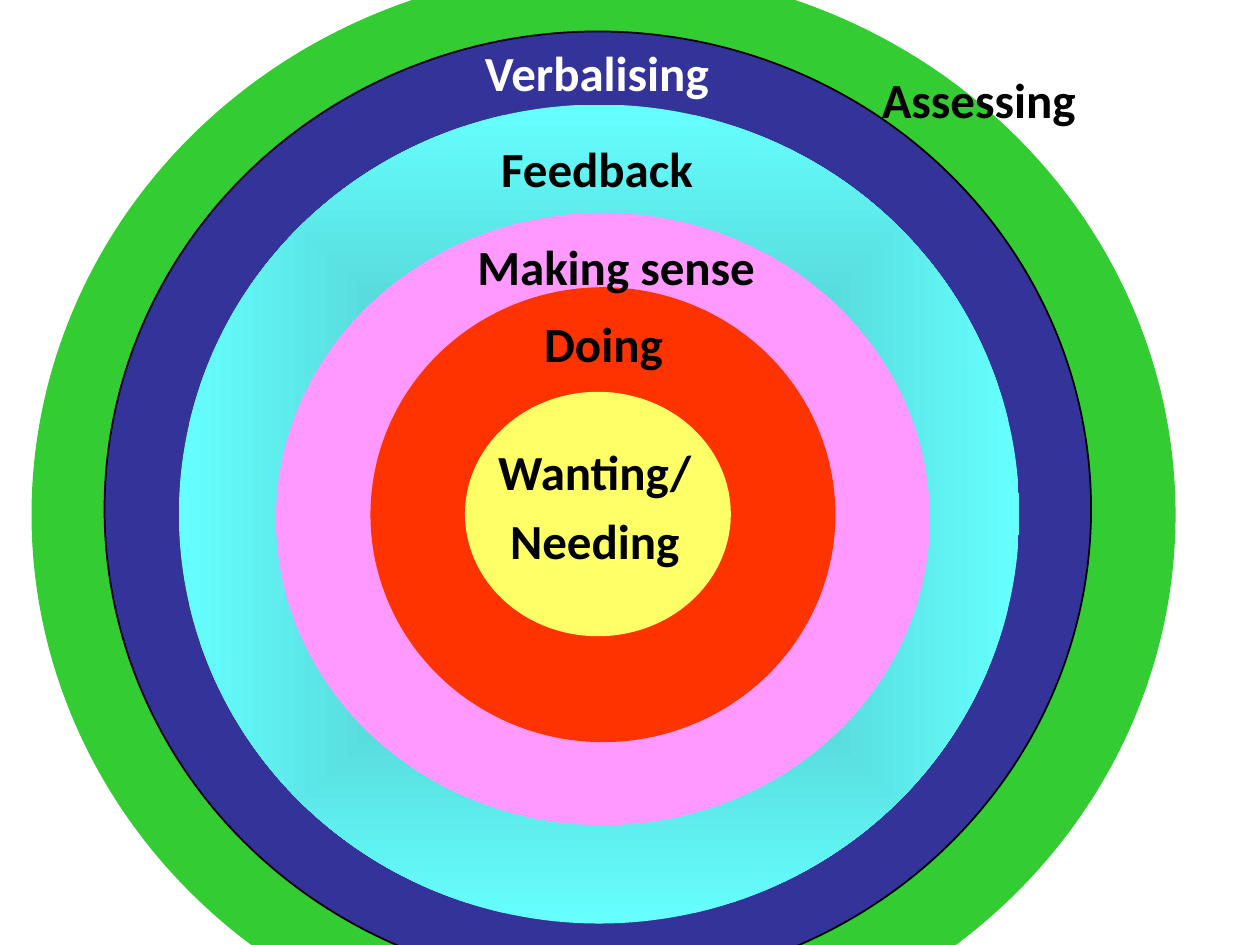
from dataclasses import dataclass

from lxml import etree
from pptx import Presentation
from pptx.dml.color import RGBColor
from pptx.enum.shapes import MSO_SHAPE
from pptx.enum.text import MSO_ANCHOR, MSO_AUTO_SIZE, PP_ALIGN
from pptx.oxml import parse_xml
from pptx.oxml.ns import nsdecls, qn
from pptx.util import Inches, Pt

OVAL = MSO_SHAPE.OVAL
MIDDLE = MSO_ANCHOR.MIDDLE
CENTER = PP_ALIGN.CENTER
FIT_SHAPE = MSO_AUTO_SIZE.SHAPE_TO_FIT_TEXT
BLANK_LAYOUT = 6


@dataclass(frozen=True)
class Theme:
    font: str = "Calibri"
    size: float = 28
    gap: float = 5.6
    black: str = "000000"
    white: str = "FFFFFF"
    green: str = "33CC33"
    navy: str = "333399"
    teal: str = "47B2B2"
    cyan: str = "66FFFF"
    pink: str = "FF99FF"
    red: str = "FF3300"
    yellow: str = "FFFF66"


THEME = Theme()

# Rings from the outside in: left, top, width, height, fill, outline
RINGS = [
    (0.25, -0.25, 9.08, 8.67, THEME.green, None),
    (0.83, 0.25, 7.83, 7.58, THEME.navy, THEME.black),
    (1.42, 0.83, 6.67, 6.5, (THEME.teal, THEME.cyan), None),
    (2.19, 1.69, 5.19, 4.86, THEME.pink, None),
    (2.94, 2.28, 3.69, 3.61, THEME.red, None),
    (3.69, 3.11, 2.11, 1.94, THEME.yellow, None),
]

# Ring labels: text, left, top, width, colour
LABELS = [
    ("Making sense", 3.69, 1.83, 2.43, THEME.black),
    ("Doing", 4.22, 2.44, 1.15, THEME.black),
    ("Feedback", 3.88, 1.05, 1.74, THEME.black),
    ("Verbalising", 3.75, 0.29, 2, THEME.white),
    ("Assessing", 6.9, 0.5, 1.76, THEME.black),
]
LABEL_HEIGHT = 0.57


def rgb(value):
    return RGBColor.from_string(value)


def fill_from_centre(sp, inner, outer):
    """Gradient that spreads from the middle of the shape to its edge."""
    sp.fill.gradient()
    for stop, color, position in zip(sp.fill.gradient_stops, (inner, outer), (0, 1)):
        stop.color.rgb = rgb(color)
        stop.position = position
    grad = sp.element.spPr.find(qn("a:gradFill"))
    grad.remove(grad.find(qn("a:lin")))
    spread = parse_xml(f'<a:path {nsdecls("a")} path="shape"/>')
    etree.SubElement(spread, qn("a:fillToRect"), dict.fromkeys("ltrb", "50000"))
    grad.append(spread)


def add_ring(slide, left, top, width, height, fill, outline):
    sp = slide.shapes.add_shape(
        OVAL, Inches(left), Inches(top), Inches(width), Inches(height))
    sp.shadow.inherit = False
    if isinstance(fill, tuple):
        fill_from_centre(sp, *fill)
    else:
        sp.fill.solid()
        sp.fill.fore_color.rgb = rgb(fill)
    if outline:
        sp.line.color.rgb = rgb(outline)
        sp.line.width = Pt(1)
    else:
        sp.line.fill.background()


def add_text_box(slide, left, top, width, height):
    box = slide.shapes.add_textbox(
        Inches(left), Inches(top), Inches(width), Inches(height))
    return box.text_frame


def add_run(p, text, color):
    r = p.add_run()
    r.text = text
    r.font.name = THEME.font
    r.font.size = Pt(THEME.size)
    r.font.bold = True
    r.font.color.rgb = rgb(color)


def add_label(slide, text, left, top, width, color):
    tf = add_text_box(slide, left, top, width, LABEL_HEIGHT)
    tf.word_wrap = False
    tf.auto_size = FIT_SHAPE
    add_run(tf.paragraphs[0], text, color)


def add_core_text(slide, lines):
    tf = add_text_box(slide, 1.53, 3.12, 6.38, 1.78)
    tf.word_wrap = True
    tf.vertical_anchor = MIDDLE
    for i, line in enumerate(lines):
        p = tf.add_paragraph() if i else tf.paragraphs[0]
        p.alignment = CENTER
        p.space_before = Pt(THEME.gap)
        add_run(p, line, THEME.black)


def main():
    prs = Presentation()
    prs.slide_width, prs.slide_height = Inches(10), Inches(7.5)
    slide = prs.slides.add_slide(prs.slide_layouts[BLANK_LAYOUT])

    # Concentric rings
    for ring in RINGS:
        add_ring(slide, *ring)

    # Words on the core and on the rings
    add_core_text(slide, ["Wanting/", "Needing"])
    for label in LABELS:
        add_label(slide, *label)

    prs.save("out.pptx")


if __name__ == "__main__":
    main()
